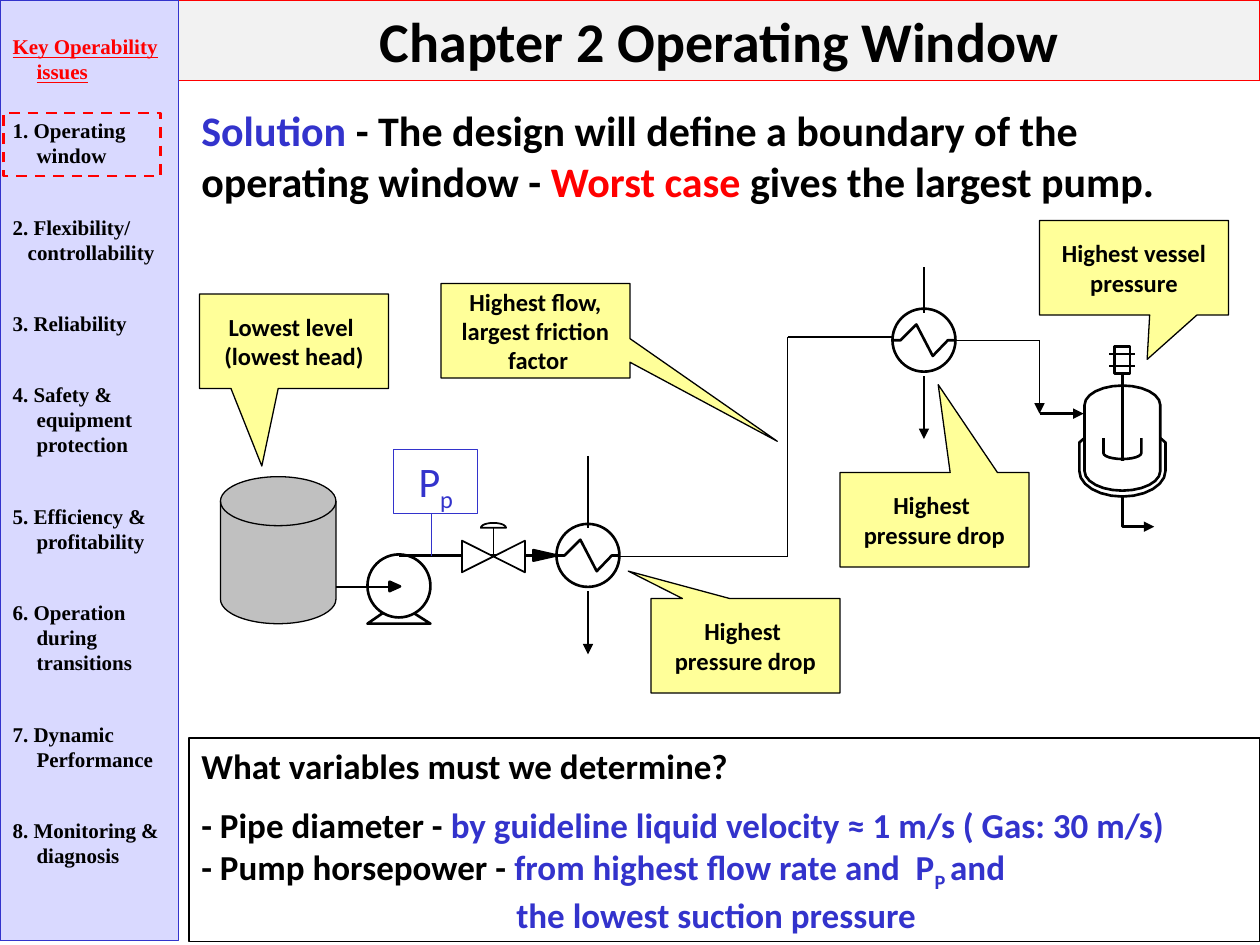
from itertools import pairwise
from math import cos, radians, sin
from lxml.etree import SubElement
from pptx import Presentation
from pptx.dml.color import RGBColor
from pptx.enum.dml import MSO_LINE
from pptx.enum.shapes import MSO_CONNECTOR, MSO_SHAPE
from pptx.enum.text import MSO_ANCHOR, MSO_AUTO_SIZE, PP_ALIGN
from pptx.oxml.ns import qn
from pptx.util import Inches, Pt

HUE = {"ink": "000000", "blue": "3333CC", "red": "FF0000", "white": "FFFFFF",
       "pale": "D9D9FF", "note": "FFFF99", "gray": "C0C0C0", "head": "F2F2F2"}
COLS = 120

deck = Presentation()
deck.slide_width, deck.slide_height = Inches(10), Inches(7.5)
page = deck.slides.add_slide(deck.slide_layouts[1])
pen = page.shapes
CELL = deck.slide_width / COLS


def emu(*cells):
    return [round(c * CELL) for c in cells]


def put(item, vals):
    for key, val in vals.items():
        setattr(item, key, val)


def tint(name):
    return RGBColor.from_string(HUE[name])


def spot(box, x, y):
    return box[0] + x * box[2], box[1] + y * box[3]


def part(box, x, y, w, h):
    return *spot(box, x, y), w * box[2], h * box[3]


def arc(x, y, rx, ry, start, stop, steps=12):
    turns = [radians(start + (stop - start) * i / steps) for i in range(steps + 1)]
    return [(x + rx * cos(t), y + ry * sin(t)) for t in turns]


def stroke(item, line, width, tail=False):
    item.line.color.rgb = tint(line)
    item.line.width = Pt(width)
    if tail:
        SubElement(item._element.spPr.find(qn("a:ln")), qn("a:tailEnd"), type="triangle")


def paint(item, fill, line="ink", width=0.75, tail=False):
    if fill:
        item.fill.solid()
        item.fill.fore_color.rgb = tint(fill)
    else:
        item.fill.background()
    stroke(item, line, width, tail)


def block(kind, box, fill=None, line="ink", width=0.75):
    item = pen.add_shape(kind, *emu(*box))
    item.shadow.inherit = False
    paint(item, fill, line, width)
    return item


def trace(box, spots, fill=None, width=1.5, close=True, tail=False):
    dots = [emu(*spot(box, *s)) for s in spots]
    form = pen.build_freeform(*dots[0], scale=1.0)
    form.add_line_segments(dots[1:], close=close)
    item = form.convert_to_shape()
    item.shadow.inherit = False
    paint(item, fill, "ink", width, tail)


def wire(a, b, width=0.75, line="ink", tail=False):
    item = pen.add_connector(MSO_CONNECTOR.STRAIGHT, *emu(*a, *b))
    stroke(item, line, width, tail)
    SubElement(item._element.spPr, qn("a:effectLst"))
    return item


def write(frame, paras, size, face="Calibri", bold=True, frame_vals={}):
    put(frame, {"word_wrap": True, "auto_size": MSO_AUTO_SIZE.NONE,
                "vertical_anchor": MSO_ANCHOR.TOP} | frame_vals)
    for i, (runs, vals) in enumerate(paras):
        para = frame.add_paragraph() if i else frame.paragraphs[0]
        left, hang = vals.get("left", 0), vals.get("hang", 0)
        props = para._p.get_or_add_pPr()
        props.set("marL", str(Inches(left)))
        props.set("indent", str(-Inches(hang)))
        put(para, {"space_before": Pt(0), "alignment": PP_ALIGN.LEFT} | vals.get("para", {}))
        if frame._parent.is_placeholder:
            SubElement(props, qn("a:buNone"))
        for text, hue, *low in runs:
            run = para.add_run()
            run.text = text
            put(run.font, {"size": Pt(size), "name": face, "bold": bold} | vals.get("font", {}))
            run.font.color.rgb = tint(hue)
            if low:
                run._r.get_or_add_rPr().set("baseline", "-25000")


MID = {"para": {"alignment": PP_ALIGN.CENTER}}


def place(item, box):
    put(item, dict(zip(("left", "top", "width", "height"), emu(*box))))


def title(box):
    place(pen.title, box)
    paint(pen.title, "head", "red")
    write(pen.title.text_frame, [([("Chapter 2 Operating Window", "ink")], MID)], 32,
          frame_vals={"vertical_anchor": MSO_ANCHOR.MIDDLE})


def menu(box):
    body = page.placeholders[1]
    place(body, box)
    paint(body, "pale", "blue")
    rows = [("Key Operability issues", 0), ("1. Operating window", 19.4),
            ("2. Flexibility/", 26.5), ("controllability", 0)]
    rows += [(text, 26.5) for text in (
        "3. Reliability", "4. Safety & equipment protection", "5. Efficiency & profitability",
        "6. Operation during transitions", "7. Dynamic Performance", "8. Monitoring & diagnosis")]
    paras = []
    for i, (text, gap) in enumerate(rows):
        inset = {"left": 0.19, "hang": 0.19} if gap or i == 0 else {"left": 0.12}
        paras.append(([(text, "ink" if i else "red")], inset | {
            "para": {"space_before": Pt(gap), "line_spacing": Pt(14.3)},
            "font": {"underline": i == 0}}))
    write(body.text_frame, paras, 12, "Times New Roman", frame_vals={"margin_top": Inches(0.27)})
    mark = block(MSO_SHAPE.RECTANGLE, part(box, 0.02, 0.12, 0.88, 0.067), None, "red", 1.5)
    mark.line.dash_style = MSO_LINE.DASH


def intro(box):
    item = pen.add_textbox(*emu(*box))
    write(item.text_frame, [([
        ("Solution", "blue"),
        (" - The design will define a boundary of the operating window - ", "ink"),
        ("Worst case", "red"), (" gives the largest pump.", "ink")], {})], 24)


def answer(box):
    item = block(MSO_SHAPE.RECTANGLE, box)
    write(item.text_frame, [
        ([("What variables must we determine?", "ink")], {}),
        ([("- Pipe diameter - ", "ink"),
          ("by guideline liquid velocity ≈ 1 m/s ( Gas: 30 m/s)", "blue")],
         {"para": {"space_before": Pt(10)}}),
        ([("- Pump horsepower - ", "ink"), ("from highest flow rate and  P", "blue"),
          ("P ", "blue", True), ("and", "blue")], {}),
        ([("the lowest suction pressure", "blue")], {"left": 2.5})], 20)


def pump(box):
    trace(box, [(0.24, 0.85), (0, 1), (1, 1), (0.74, 0.85)], "white")
    block(MSO_SHAPE.OVAL, part(box, 0, 0, 1, 0.91), "white", width=1.5)


def arrow(box):
    trace(box, [(0, 0), (1, 0.5), (0, 1)], "ink")


def cooler(box, rise):
    block(MSO_SHAPE.OVAL, box, "white", width=1.5)
    trace(box, [(0, 0.5), (0.13, 0.5), (0.38, 0.25), (0.64, 0.75), (0.88, 0.5), (1, 0.5)],
          close=False)
    wire(spot(box, 0.5, -rise), spot(box, 0.5, 0.07))
    wire(spot(box, 0.5, 1.07), spot(box, 0.5, 2.07), tail=True)


def valve(box):
    trace(box, [(0, 0.36), (1, 1), (1, 0.36), (0, 1)], "white", 1)
    trace(box, arc(0.5, 0.1, 0.2, 0.1, 180, 360), "white", 1)
    wire(spot(box, 0.5, 0.67), spot(box, 0.5, 0.1), 1)


def tank(box):
    block(MSO_SHAPE.FLOWCHART_MAGNETIC_DISK, box, "gray")


def vessel(box):
    trace(box, arc(0.5, 0.83, 0.5, 0.17, 0, 180)
          + [(0, 0.64), (0.06, 0.61), (0.94, 0.61), (1, 0.64)], "white")
    trace(box, arc(0.5, 0.83, 0.44, 0.13, 0, 180) + arc(0.5, 0.39, 0.44, 0.13, 180, 360), "white")
    wire(spot(box, 0.5, 0.26), spot(box, 0.5, 0.76), 1.5)
    motor = block(MSO_SHAPE.RECTANGLE, part(box, 0.41, 0, 0.18, 0.18), "white", width=1.5)
    wire(spot(box, 0.5, 0.26), spot(box, 0.5, 0.18), 1.5).end_connect(motor, 2)
    for y in (0.05, 0.13):
        wire(spot(box, 0.35, y), spot(box, 0.65, y), 1.5)
    trace(box, [(0.28, 0.61)] + arc(0.5, 0.71, 0.22, 0.04, 180, 0) + [(0.72, 0.61)], close=False)
    trace(box, [(0.5, 1), (0.5, 1.2), (0.87, 1.2)], close=False, tail=True)


def gauge(box):
    item = block(MSO_SHAPE.RECTANGLE, box, None, "blue")
    write(item.text_frame, [([("P", "blue"), ("p", "blue", True)], MID)], 24, bold=False)
    wire(spot(box, 0.45, 1), spot(box, 0.45, 1.66), line="blue")


def note(box, tip, *lines):
    item = block(MSO_SHAPE.RECTANGULAR_CALLOUT, box, "note")
    for i, val in enumerate(tip):
        item.adjustments[i] = val
    write(item.text_frame, [([(text, "ink")], MID) for text in lines], 14,
          frame_vals={"word_wrap": False, "vertical_anchor": MSO_ANCHOR.MIDDLE})


def plant():
    pump((35, 52.8, 6, 6.6))
    wire((32, 55.9), (37.2, 55.9), 1.5)
    arrow((37.1, 55.4, 1, 0.9))
    wire((38, 52.9), (51, 52.9), 1.5)
    arrow((50.8, 52.4, 2.2, 1))
    tank((21, 45.4, 11, 14))
    cooler((53, 49.9, 6, 6), 1.08)
    for a, b in pairwise([(59, 53), (75, 53), (75, 32.1), (85, 32.1)]):
        wire(a, b)
    cooler((85, 29.4, 6, 6), 0.66)
    wire((91, 32.4), (99, 32.4))
    wire((99, 32.4), (99, 39.4), tail=True)
    vessel((102.8, 33, 8.2, 14.3))
    wire((99, 39.4), (103.2, 39.4), 1.5, tail=True)
    valve((44, 49.8, 6, 4.7))
    gauge((37.5, 42.8, 8, 6.1))


def notes():
    drop = ("Highest ", "pressure drop")
    for x, y, tip, lines in (
            (99, 21, (0.07, 0.97), ("Highest vessel", "pressure")),
            (80, 45, (0.02, -1.43), drop),
            (62, 57, (-0.62, -0.79), drop),
            (42, 27, (1.28, 1.17), ("Highest flow,", "largest friction", " factor")),
            (19, 28, (-0.17, 1.32), ("Lowest level ", "(lowest head)"))):
        note((x, y, 18, 9), tip, *lines)


intro((18, 9.4, 101, 10.9))
answer((18, 70.3, 102, 19.4))
plant()
notes()
menu((0, 0, 17, 89.6))
title((17, 0, 103, 7.7))
deck.save("out.pptx")
